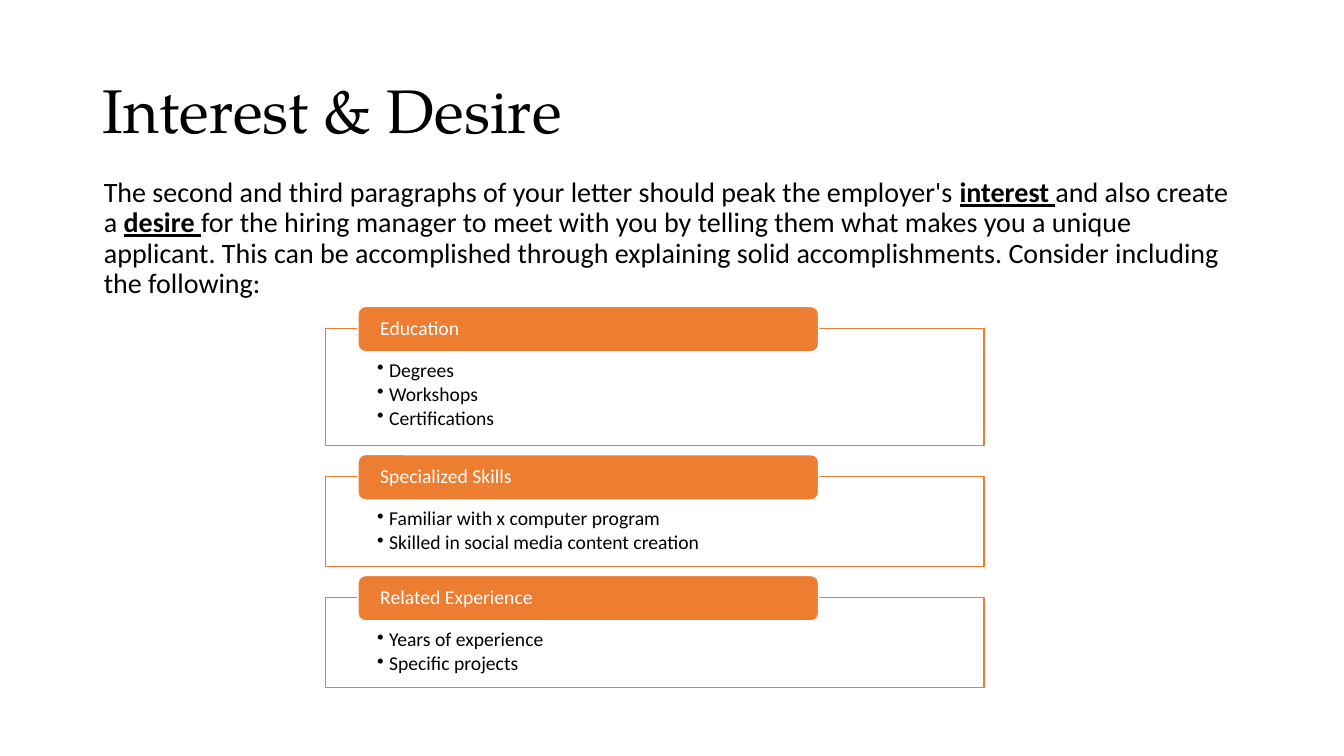
from lxml.etree import SubElement
from pptx import Presentation
from pptx.dml.color import RGBColor
from pptx.enum.shapes import MSO_SHAPE
from pptx.enum.text import MSO_ANCHOR, MSO_AUTO_SIZE, PP_ALIGN
from pptx.oxml.ns import qn
from pptx.util import Pt

PX = 9144
BLACK, WHITE, ORANGE = "000000", "FFFFFF", "ED7D31"
INTRO = [
    ("The second and third paragraphs of your letter should peak the employer's ", False),
    ("interest ", True),
    ("and also create a ", False),
    ("desire ", True),
    ("for the hiring manager to meet with you by telling them what makes you a unique "
     "applicant. This can be accomplished through explaining solid accomplishments. "
     "Consider including the following:", False),
]
CARDS = [
    ("Education", ["Degrees", "Workshops", "Certifications"]),
    ("Specialized Skills", ["Familiar with x computer program",
                            "Skilled in social media content creation"]),
    ("Related Experience", ["Years of experience", "Specific projects"]),
]


def color(code):
    """Turn a hex string into a colour."""
    return RGBColor.from_string(code)


def put(item, values):
    """Set each named value on an item."""
    for name, value in values.items():
        setattr(item, name, value)


def place(item, left, top, width, height):
    """Move and size an item in px."""
    put(item, {"left": left * PX, "top": top * PX,
               "width": width * PX, "height": height * PX})


def frame(item, anchor, inset):
    """Set the anchor and the px insets (left, top, right, bottom)."""
    sides = ("margin_left", "margin_top", "margin_right", "margin_bottom")
    put(item.text_frame, {"word_wrap": True, "auto_size": MSO_AUTO_SIZE.NONE,
                          "vertical_anchor": anchor,
                          **{side: px * PX for side, px in zip(sides, inset)}})


def write(para, runs, size, code=BLACK, face="Calibri", after=0):
    """Fill a paragraph with (text, strong) runs."""
    put(para, {"alignment": PP_ALIGN.LEFT, "line_spacing": 0.9,
               "space_before": Pt(0), "space_after": Pt(after)})
    for text, strong in runs:
        run = para.add_run()
        run.text = text
        put(run.font, {"size": Pt(size), "name": face,
                       "bold": strong, "underline": strong})
        run.font.color.rgb = color(code)


def mark(para, char=None, hang=0):
    """Give a paragraph a hanging bullet, or none."""
    props = para._p.get_or_add_pPr()
    props.set("marL", str(hang * PX))
    props.set("indent", str(-hang * PX))
    if char:
        SubElement(props, qn("a:buChar")).set("char", char)
    else:
        SubElement(props, qn("a:buNone"))


def panel(slide, kind, box, fill, line):
    """Add a filled and outlined shape."""
    shape = slide.shapes.add_shape(kind, *(px * PX for px in box))
    shape.shadow.inherit = False
    shape.fill.solid()
    shape.fill.fore_color.rgb = color(fill)
    shape.line.color.rgb = color(line)
    shape.line.width = Pt(1)
    return shape


def card(slide, top, height, title, items):
    """Draw a listing box with its header tab."""
    body = panel(slide, MSO_SHAPE.RECTANGLE, (323, top, 653, height), WHITE, ORANGE)
    frame(body, MSO_ANCHOR.TOP, (51, 32, 51, 11))
    text = body.text_frame
    for index, item in enumerate(items):
        para = text.add_paragraph() if index else text.paragraphs[0]
        para.level = 1
        mark(para, "•", 12)
        write(para, [(item, False)], 14, after=2)
    tab = panel(slide, MSO_SHAPE.ROUNDED_RECTANGLE, (355, top - 22, 457, 45), ORANGE, WHITE)
    frame(tab, MSO_ANCHOR.MIDDLE, (20, 0, 20, 0))
    write(tab.text_frame.paragraphs[0], [(title, False)], 14, WHITE)


def main():
    """Build the slide and save it."""
    deck = Presentation()
    put(deck, {"slide_width": 1333 * PX, "slide_height": 750 * PX})
    slide = deck.slides.add_slide(deck.slide_layouts[1])
    title, intro = slide.placeholders
    place(title, 92, 40, 1150, 145)
    frame(title, MSO_ANCHOR.MIDDLE, (10, 5, 10, 5))
    write(title.text_frame.paragraphs[0], [("Interest & Desire", False)], 44,
          face="TeX Gyre Pagella")
    place(intro, 93, 172, 1150, 476)
    frame(intro, MSO_ANCHOR.TOP, (10, 5, 10, 5))
    para = intro.text_frame.paragraphs[0]
    mark(para)
    write(para, INTRO, 20)
    top = 326
    for name, items in CARDS:
        height = 35 + 27 * len(items)
        card(slide, top, height, name, items)
        top += height + 31
    deck.save("out.pptx")


if __name__ == "__main__":
    main()
